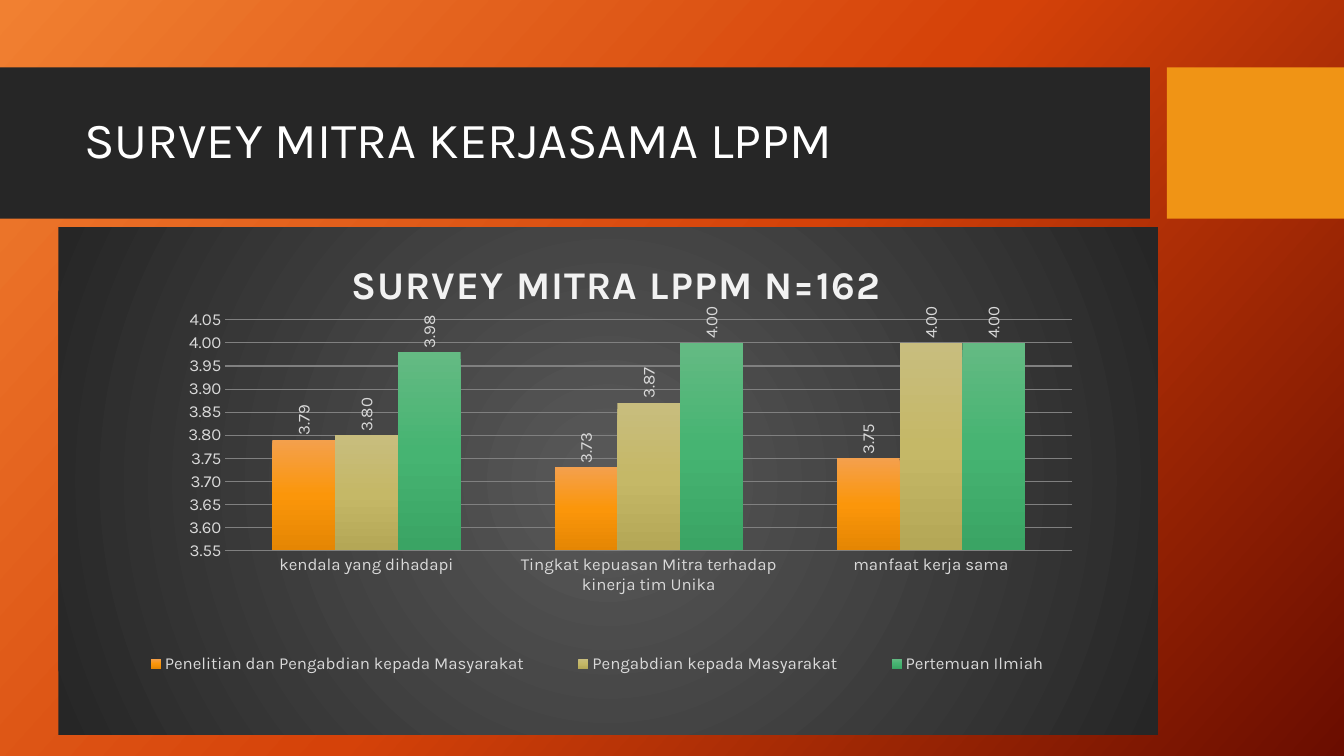
from pptx import Presentation
from pptx.chart.data import CategoryChartData as Data
from pptx.dml.color import RGBColor
from pptx.enum.chart import XL_CHART_TYPE as Kind, XL_LABEL_POSITION as Spot
from pptx.enum.chart import XL_LEGEND_POSITION as Side, XL_TICK_MARK as Tick
from pptx.enum.shapes import MSO_SHAPE as Preset
from pptx.enum.text import MSO_ANCHOR as Anchor
from pptx.oxml import parse_xml
from pptx.oxml.ns import nsdecls, qn
from pptx.util import Cm, Pt

FACE = "Karla"
PALE = "D9D9D9"
CATS = ["kendala yang dihadapi",
        "Tingkat kepuasan Mitra terhadap kinerja tim Unika",
        "manfaat kerja sama"]
ROWS = [
    ("Penelitian dan Pengabdian kepada Masyarakat", (3.79, 3.73, 3.75),
     ("F4A04D", "FB960A", "E58603")),
    ("Pengabdian kepada Masyarakat", (3.8, 3.87, 4),
     ("C8BD7E", "C5B867", "B4A756")),
    ("Pertemuan Ilmiah", (3.98, 4, 4),
     ("64BA83", "46B472", "3AA464")),
]


def color(text):
    """Turn a hex string into a colour."""
    return RGBColor.from_string(text)


def style(font, size, tint, bold=False):
    """Set the face, size, colour and weight of a font."""
    font.name, font.size, font.bold = FACE, Pt(size), bold
    font.color.rgb = color(tint)


def blend(tints, angle=None):
    """Build a gradient, linear at an angle or else radial."""
    step = 100000 // (len(tints) - 1)
    stops = "".join(f'<a:gs pos="{i * step}"><a:srgbClr val="{tint}"/></a:gs>'
                    for i, tint in enumerate(tints))
    if angle is None:
        way = ('<a:path path="circle"><a:fillToRect l="50000" t="50000" '
               'r="50000" b="50000"/></a:path>')
    else:
        way = f'<a:lin ang="{angle * 60000}" scaled="0"/>'
    return parse_xml(f'<a:gradFill {nsdecls("a")} rotWithShape="1">'
                     f'<a:gsLst>{stops}</a:gsLst>{way}</a:gradFill>')


def paint(props, tints, angle):
    """Swap a solid fill for a gradient."""
    props.replace(props.find(qn("a:solidFill")), blend(tints, angle))


def place(host, x, y, w=None, h=None, inner=False):
    """Fix a chart part at fractions of the chart area."""
    marks = '<c:layoutTarget val="inner"/>' if inner else ""
    marks += '<c:xMode val="edge"/><c:yMode val="edge"/>'
    for key, val in zip("xywh", (x, y, w, h)):
        if val is not None:
            marks += f'<c:{key} val="{val}"/>'
    made = parse_xml(f'<c:layout {nsdecls("c")}><c:manualLayout>{marks}'
                     '</c:manualLayout></c:layout>')
    old = host.find(qn("c:layout"))
    if old is None:
        host.insert(0, made)
    else:
        host.replace(old, made)


def add_block(slide, left, width, tint):
    """Add a plain block of the header band."""
    block = slide.shapes.add_shape(Preset.RECTANGLE, Cm(left), Cm(1.7),
                                   Cm(width), Cm(3.81))
    block.shadow.inherit = False
    block.fill.solid()
    block.fill.fore_color.rgb = color(tint)
    block.line.fill.background()


def add_head(slide, text):
    """Add the slide heading."""
    frame = slide.shapes.add_textbox(Cm(1.88), Cm(2.08), Cm(26.7),
                                     Cm(3)).text_frame
    frame.word_wrap = True
    frame.vertical_anchor = Anchor.MIDDLE
    frame.text = text
    para = frame.paragraphs[0]
    para.line_spacing = 0.9
    style(para.runs[0].font, 36, "FFFFFF")


def set_title(chart, text):
    """Set the chart title with spaced bold letters."""
    chart.has_title = True
    title = chart.chart_title
    title.text_frame.text = text
    font = title.text_frame.paragraphs[0].runs[0].font
    style(font, 28, "F2F2F2", True)
    font._element.set("spc", "100")
    title.include_in_layout = False
    place(chart.element.find(".//" + qn("c:title")), 0.26, 0.05)


def set_axes(chart):
    """Format both axes and the grid."""
    for axis in (chart.category_axis, chart.value_axis):
        axis.major_tick_mark = axis.minor_tick_mark = Tick.NONE
        axis.format.line.fill.background()
        style(axis.tick_labels.font, 12, PALE)
    axis.minimum_scale, axis.maximum_scale = 3.55, 4.05
    axis.major_unit = 0.05
    axis.tick_labels.number_format = "0.00"
    axis.tick_labels.number_format_is_linked = False
    grid = axis.major_gridlines.format.line
    grid.width = Pt(0.75)
    grid.color.rgb = color("808080")


def set_bars(plot):
    """Colour the bars and set upright value labels."""
    plot.gap_width, plot.overlap = 150, 0
    plot.vary_by_categories = False
    for bars, (_, _, tints) in zip(plot.series, ROWS):
        bars.format.fill.solid()
        paint(bars._element.find(qn("c:spPr")), tints, 90)
        labels = bars.data_labels
        labels.show_value = True
        labels.number_format = "0.00"
        labels.number_format_is_linked = False
        labels.position = Spot.OUTSIDE_END
        style(labels.font, 12, PALE)
        body = bars._element.find(f'{qn("c:dLbls")}//{qn("a:bodyPr")}')
        body.set("rot", "-5400000")
        body.set("vert", "horz")


def set_legend(chart):
    """Put the legend below the plot."""
    chart.has_legend = True
    legend = chart.legend
    legend.position = Side.BOTTOM
    legend.include_in_layout = False
    style(legend.font, 12, PALE)
    place(chart.element.find(".//" + qn("c:legend")), 0.04, 0.82, 0.9, 0.08)


def add_graph(slide):
    """Add the survey chart."""
    data = Data(number_format="0.00")
    data.categories = CATS
    for name, vals, _ in ROWS:
        data.add_series(name, vals)
    chart = slide.shapes.add_chart(Kind.COLUMN_CLUSTERED, Cm(1.47), Cm(5.72),
                                   Cm(27.71), Cm(12.8), data).chart
    style(chart.font, 12, "FFFFFF")
    set_title(chart, "SURVEY MITRA LPPM N=162")
    set_axes(chart)
    set_bars(chart.plots[0])
    set_legend(chart)
    place(chart.element.find(".//" + qn("c:plotArea")),
          0.152, 0.183, 0.77, 0.454, True)
    props = parse_xml(f'<c:spPr {nsdecls("c", "a")}><a:ln><a:noFill/></a:ln>'
                      '</c:spPr>')
    props.insert(0, blend(("595959", "262626")))
    chart.element.find(qn("c:chart")).addnext(props)


def main():
    """Build and save the slide."""
    deck = Presentation()
    deck.slide_width, deck.slide_height = Cm(33.87), Cm(19.05)
    slide = deck.slides.add_slide(deck.slide_layouts[6])
    slide.background.fill.solid()
    paint(slide.element.find(".//" + qn("p:bgPr")),
          ("F18031", "D54209", "6A0D00"), 42)
    add_block(slide, 0, 28.98, "262626")
    add_block(slide, 29.41, 4.46, "F09415")
    add_head(slide, "SURVEY MITRA KERJASAMA LPPM")
    add_graph(slide)
    deck.save("out.pptx")


if __name__ == "__main__":
    main()
